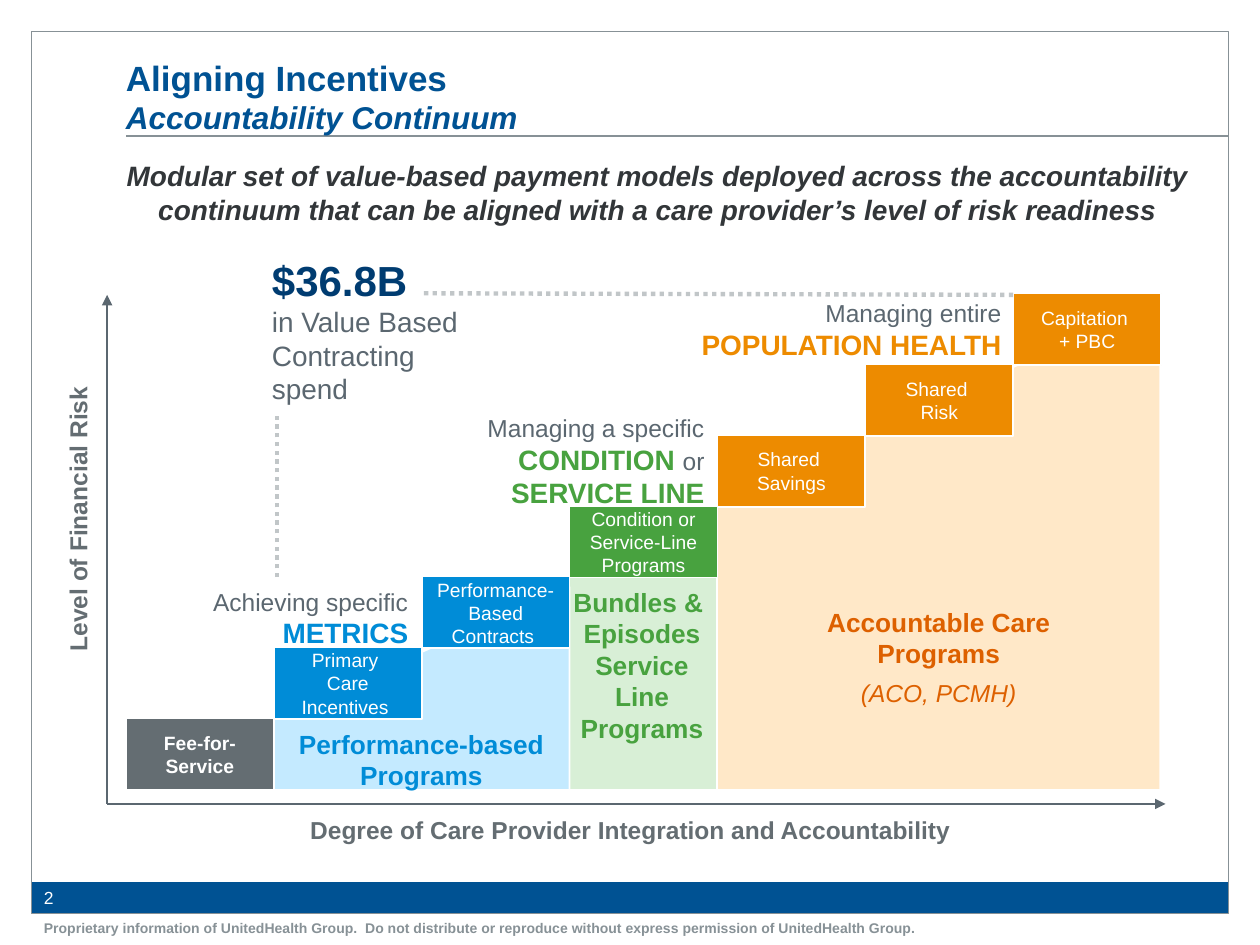
from lxml import etree
from pptx import Presentation
from pptx.dml.color import RGBColor
from pptx.enum.dml import MSO_LINE
from pptx.enum.shapes import MSO_CONNECTOR, MSO_SHAPE
from pptx.enum.text import MSO_ANCHOR, PP_ALIGN
from pptx.oxml.ns import qn
from pptx.util import Pt

LEFT, CENTER, RIGHT = PP_ALIGN.LEFT, PP_ALIGN.CENTER, PP_ALIGN.RIGHT
TOP, MIDDLE, BOTTOM = MSO_ANCHOR.TOP, MSO_ANCHOR.MIDDLE, MSO_ANCHOR.BOTTOM
RECTANGLE, STRAIGHT = MSO_SHAPE.RECTANGLE, MSO_CONNECTOR.STRAIGHT
DOTTED = MSO_LINE.ROUND_DOT

COLORS = {
    "navy": "005293", "deep": "003C71", "ink": "323639", "slate": "5B6770",
    "gray": "646D72", "frame": "879196", "dots": "C1C6C8", "white": "FFFFFF",
    "blue": "008CD7", "pale blue": "C4EAFF", "green": "48A23F",
    "pale green": "D8EFD6", "orange": "ED8B00", "pale orange": "FFE8C8",
    "rust": "DD6000",
}

# Text styles: colour and font attributes
STYLES = {
    "title": ("navy", {"size": Pt(20), "bold": True}),
    "subtitle": ("navy", {"size": Pt(18), "bold": True, "italic": True}),
    "message": ("ink", {"size": Pt(16), "bold": True, "italic": True}),
    "footer": ("frame", {"size": Pt(8), "bold": True}),
    "page": ("white", {"size": Pt(10)}),
    "axis": ("gray", {"size": Pt(14), "bold": True}),
    "step": ("white", {"size": Pt(11)}),
    "first step": ("white", {"size": Pt(11), "bold": True}),
    "performance": ("blue", {"size": Pt(15), "bold": True}),
    "bundles": ("green", {"size": Pt(15), "bold": True}),
    "accountable": ("rust", {"size": Pt(15), "bold": True}),
    "examples": ("rust", {"size": Pt(14), "italic": True}),
    "goal": ("slate", {"size": Pt(14)}),
    "metrics": ("blue", {"size": Pt(16), "bold": True}),
    "condition": ("green", {"size": Pt(16), "bold": True}),
    "population": ("orange", {"size": Pt(16), "bold": True}),
    "amount": ("deep", {"size": Pt(24), "bold": True}),
    "spend": ("slate", {"size": Pt(16)}),
}

# Staircase, lowest step first: colour, style, paragraphs
STEPS = [
    ("gray", "first step", ["Fee-for-\nService"]),
    ("blue", "step", ["Primary \nCare\nIncentives "]),
    ("blue", "step", ["Performance-\nBased\nContracts "]),
    ("green", "step", ["Condition or", "Service-Line", "Programs"]),
    ("orange", "step", ["Shared \nSavings"]),
    ("orange", "step", ["Shared \nRisk"]),
    ("orange", "step", ["Capitation \n+ PBC"]),
]
STEP_LEFT, STEP_TOP, STEP_WIDTH, STEP_HEIGHT, STEP_RISE = 72, 410.4, 84.5, 41, 40.45
FLOOR = 451.4

# Text boxes: place, paragraphs of (text, style) runs, layout options
NO_INSETS = (0, 0, 0, 0)
TEXTS = [
    ((18, 522, 684, 18),
     [[("Proprietary information of UnitedHealth Group.  Do not distribute or "
        "reproduce without express permission of UnitedHealth Group.", "footer")]], {}),
    ((72, 18, 432, 59.8),
     [[("Aligning Incentives\n", "title"), ("Accountability Continuum", "subtitle")]],
     {"anchor": BOTTOM, "insets": NO_INSETS}),
    ((18, 504, 48, 18), [[("2", "page")]], {"anchor": MIDDLE, "insets": (7.2, 0, 0, 0)}),
    ((64, 87, 623.5, 46),
     [[("Modular set of value-based payment models deployed across the accountability "
        "continuum that can be aligned with a care provider’s level of risk readiness",
        "message")]], {"align": CENTER}),
    ((-36.7, 287.3, 164, 18.7), [[("Level of Financial Risk", "axis")]],
     {"align": CENTER, "insets": NO_INSETS, "wrap": False, "rotation": 270}),
    ((154.8, 465.8, 411, 18.7),
     [[("Degree of Care Provider Integration and Accountability", "axis")]],
     {"align": CENTER, "insets": NO_INSETS, "wrap": False}),
    ((156.2, 412.6, 169.2, 44), [[("Performance-based Programs", "performance")]],
     {"align": CENTER}),
    ((319.7, 331.2, 94.3, 98),
     [[("Bundles & ", "bundles")], [("Episodes Service Line", "bundles")],
      [("Programs", "bundles")]], {"align": CENTER}),
    ((445.7, 342.7, 181.4, 65.5),
     [[("Accountable Care Programs", "accountable")], [("(ACO, PCMH)", "examples")]],
     {"align": CENTER, "gap": 5}),
    ((99.4, 337.7, 141, 31),
     [[("Achieving specific", "goal")], [("METRICS", "metrics")]],
     {"align": RIGHT, "anchor": MIDDLE}),
    ((234, 244, 175.7, 39),
     [[("Managing a specific ", "goal"), ("CONDITION ", "condition"), ("or ", "goal"),
       ("SERVICE LINE", "condition")]], {"align": RIGHT, "anchor": MIDDLE}),
    ((380, 167.8, 199.4, 41),
     [[("Managing entire ", "goal"), ("POPULATION HEALTH", "population")]],
     {"align": RIGHT, "anchor": MIDDLE}),
    ((148.3, 141.8, 128.2, 94.3),
     [[("$36.8B", "amount")], [("in Value Based", "spend")],
      [("Contracting spend", "spend")]], {}),
]

# Pale areas under the staircase
PANELS = [
    ("pale green", [(325.5, 309.6), (409.7, 309.6), (409.7, FLOOR), (325.5, FLOOR)]),
    ("pale blue", [(325.5, 335.5), (325.5, FLOOR), (72, FLOOR), (71.3, 447)]),
    ("pale orange", [(663, 172), (663, FLOOR), (409.7, FLOOR), (409.7, 285.8)]),
]

# Lines: from, to, colour, width, dash, arrowhead
LINES = [
    ((702, 77.8), (72, 77.8), "frame", 0.75, None, False),
    ((61.2, 459.4), (61.2, 168.5), "slate", 1.5, None, True),
    ((61.2, 459.4), (666, 459.4), "slate", 1.5, None, True),
    ((579, 168.5), (241.2, 167.6), "dots", 2.5, DOTTED, False),
    ((158.4, 329.8), (158.4, 235.4), "dots", 2.5, DOTTED, False),
]


def rgb(name):
    return RGBColor.from_string(COLORS[name])


def paint(shape, fill=None, line=None):
    shape.shadow.inherit = False
    if fill:
        shape.fill.solid()
        shape.fill.fore_color.rgb = rgb(fill)
    else:
        shape.fill.background()
    if line:
        shape.line.color.rgb = rgb(line)
        shape.line.width = Pt(1)
    else:
        shape.line.fill.background()


def write(frame, paragraphs, align=LEFT, anchor=TOP, insets=(7.2, 3.6, 7.2, 3.6),
          wrap=True, gap=0):
    frame.word_wrap = wrap
    frame.vertical_anchor = anchor
    for side, inset in zip(("left", "top", "right", "bottom"), insets):
        setattr(frame, f"margin_{side}", Pt(inset))
    for i, runs in enumerate(paragraphs):
        paragraph = frame.add_paragraph() if i else frame.paragraphs[0]
        paragraph.alignment = align
        if i and gap:
            paragraph.space_before = Pt(gap)
        for text, style in runs:
            color, attributes = STYLES[style]
            for n, words in enumerate(text.split("\n")):
                if n:
                    paragraph.add_line_break()
                if not words:
                    continue
                run = paragraph.add_run()
                run.text = words
                run.font.name = "Arial"
                run.font.color.rgb = rgb(color)
                for attribute, value in attributes.items():
                    setattr(run.font, attribute, value)


def add_rectangle(shapes, place, fill=None, line=None):
    rectangle = shapes.add_shape(RECTANGLE, *map(Pt, place))
    paint(rectangle, fill, line)
    return rectangle


def add_line(shapes, start, end, color, width, dash, arrow):
    line = shapes.add_connector(STRAIGHT, *map(Pt, start + end))
    line.line.color.rgb = rgb(color)
    line.line.width = Pt(width)
    if dash:
        line.line.dash_style = dash
    properties = line._element.spPr
    if arrow:
        etree.SubElement(properties.find(qn("a:ln")), qn("a:tailEnd"), type="triangle")
    etree.SubElement(properties, qn("a:effectLst"))


def main():
    deck = Presentation()
    deck.slide_width, deck.slide_height = Pt(720), Pt(540)
    shapes = deck.slides.add_slide(deck.slide_layouts[6]).shapes

    # Footer bar and frame
    add_rectangle(shapes, (18, 504, 684, 18), fill="navy")
    add_rectangle(shapes, (18, 18, 684, 504), line="frame")

    for fill, corners in PANELS:
        start, *others = [(Pt(x), Pt(y)) for x, y in corners]
        outline = shapes.build_freeform(*start)
        outline.add_line_segments(others, close=True)
        paint(outline.convert_to_shape(), fill, "white")

    # Staircase
    for i, (fill, style, paragraphs) in enumerate(STEPS):
        place = (STEP_LEFT + i * STEP_WIDTH, STEP_TOP - i * STEP_RISE,
                 STEP_WIDTH, STEP_HEIGHT)
        step = add_rectangle(shapes, place, fill, "white")
        write(step.text_frame, [[(text, style)] for text in paragraphs],
              CENTER, MIDDLE, NO_INSETS, wrap=False)

    # Axes, rule and dotted guides
    for line in LINES:
        add_line(shapes, *line)

    # Headings and labels
    for place, paragraphs, layout in TEXTS:
        label = shapes.add_textbox(*map(Pt, place))
        options = dict(layout)
        label.rotation = options.pop("rotation", 0)
        write(label.text_frame, paragraphs, **options)

    deck.save("out.pptx")


if __name__ == "__main__":
    main()
